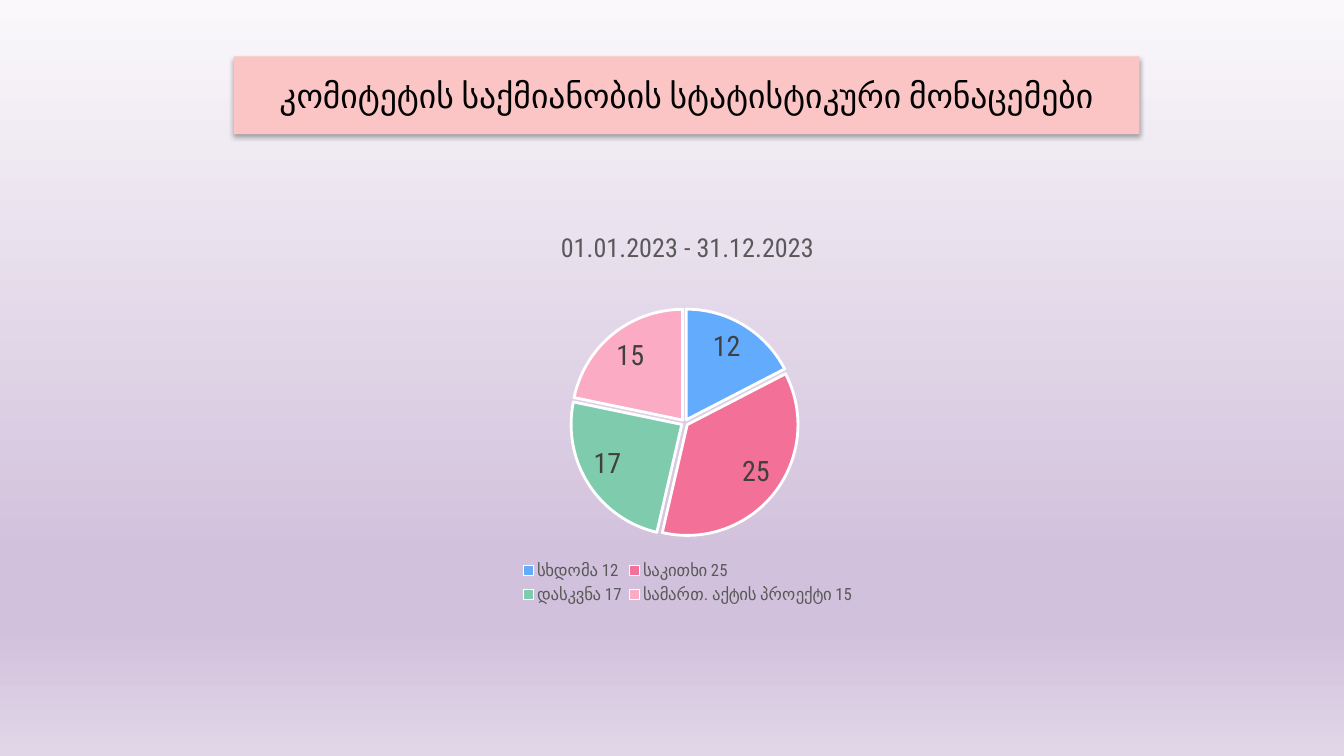
from dataclasses import dataclass

from lxml import etree
from pptx import Presentation
from pptx.chart.data import CategoryChartData
from pptx.dml.color import RGBColor
from pptx.enum.chart import XL_CHART_TYPE as ChartType
from pptx.enum.chart import XL_LABEL_POSITION as LabelPos
from pptx.enum.chart import XL_LEGEND_POSITION as LegendPos
from pptx.enum.text import MSO_ANCHOR as Anchor
from pptx.enum.text import MSO_AUTO_SIZE as AutoSize
from pptx.enum.text import PP_ALIGN as Align
from pptx.oxml import parse_xml
from pptx.oxml.ns import nsdecls, qn
from pptx.util import Inches, Pt

WIDTH, HEIGHT = Inches(13.33), Inches(7.5)


@dataclass(frozen=True)
class Theme:
    font: str = "Roboto Condensed"
    text: str = "000000"
    muted: str = "595959"
    label: str = "404040"
    edge: str = "FFFFFF"
    banner: str = "FBC5C5"
    slices: tuple = ("63ACFD", "F37199", "7FCBAE", "FBABC4")
    backdrop: tuple = ((0, "FAF8FB"), (74, "D2C1DC"), (83, "D2C1DC"), (100, "E1D6E8"))
    heading_size: float = 24
    period_size: float = 18.6
    label_size: float = 20
    legend_size: float = 12
    base_size: float = 10


THEME = Theme()


def box(left, top, width, height):
    return (int(WIDTH * left / 100), int(HEIGHT * top / 100),
            int(WIDTH * width / 100), int(HEIGHT * height / 100))


def style(font, size, color):
    font.name = THEME.font
    font.size = Pt(size)
    font.bold = False
    font.color.rgb = RGBColor.from_string(color)


def paint_background(s):
    fill = s.background.fill
    fill.gradient()
    fill.gradient_angle = 270
    stops = next(s.element.iter(qn("a:gsLst")))
    for stop in list(stops):
        stops.remove(stop)
    for percent, color in THEME.backdrop:
        stop = etree.SubElement(stops, qn("a:gs"), pos=str(percent * 1000))
        etree.SubElement(stop, qn("a:srgbClr"), val=color)


def add_banner(s, text, area):
    sp = s.shapes.title
    sp.left, sp.top, sp.width, sp.height = area
    props = sp.element.spPr
    props.find(qn("a:xfrm")).addnext(parse_xml(
        f'<a:prstGeom {nsdecls("a")} prst="roundRect"><a:avLst/></a:prstGeom>'))
    sp.fill.solid()
    sp.fill.fore_color.rgb = RGBColor.from_string(THEME.banner)
    props.append(parse_xml(
        f'<a:effectLst {nsdecls("a")}>'
        f'<a:outerShdw blurRad="{Pt(3.5)}" dist="{Pt(2.2)}" dir="5400000" rotWithShape="0">'
        '<a:srgbClr val="000000"><a:alpha val="32000"/></a:srgbClr>'
        '</a:outerShdw></a:effectLst>'))
    tf = sp.text_frame
    tf.text = text
    tf.word_wrap = True
    tf.auto_size = AutoSize.NONE
    tf.vertical_anchor = Anchor.MIDDLE
    p = tf.paragraphs[0]
    p.alignment = Align.CENTER
    style(p.runs[0].font, THEME.heading_size, THEME.text)


def manual_layout(x, y, w, h, target=""):
    return parse_xml(
        f'<c:layout {nsdecls("c")}><c:manualLayout>{target}'
        '<c:xMode val="edge"/><c:yMode val="edge"/>'
        f'<c:x val="{x}"/><c:y val="{y}"/><c:w val="{w}"/><c:h val="{h}"/>'
        '</c:manualLayout></c:layout>')


def place_chart_parts(chart):
    plot_area = next(chart.element.iter(qn("c:plotArea")))
    for layout in plot_area.findall(qn("c:layout")):
        plot_area.remove(layout)
    plot_area.insert(0, manual_layout(
        0.3, 0.24, 0.39, 0.57, '<c:layoutTarget val="inner"/>'))
    legend = next(chart.element.iter(qn("c:legend")))
    for layout in legend.findall(qn("c:layout")):
        legend.remove(layout)
    legend.find(qn("c:legendPos")).addnext(manual_layout(0.21, 0.86, 0.58, 0.13))


def color_slices(series):
    explosion = parse_xml(f'<c:explosion {nsdecls("c")} val="3"/>')
    next(series._element.iter(qn("c:tx"))).addnext(explosion)
    for i, color in enumerate(THEME.slices):
        look = series.points[i].format
        look.fill.solid()
        look.fill.fore_color.rgb = RGBColor.from_string(color)
        look.line.color.rgb = RGBColor.from_string(THEME.edge)
        look.line.width = Pt(2)


def add_pie(s, period, counts, area):
    data = CategoryChartData()
    data.categories = [f"{name} {count}" for name, count in counts.items()]
    data.add_series("Series 1", counts.values())
    chart = s.shapes.add_chart(ChartType.PIE, *area, data).chart
    style(chart.font, THEME.base_size, THEME.text)

    chart.has_title = True
    tf = chart.chart_title.text_frame
    tf.text = period
    style(tf.paragraphs[0].runs[0].font, THEME.period_size, THEME.muted)
    chart.chart_title.include_in_layout = False

    chart.has_legend = True
    chart.legend.position = LegendPos.BOTTOM
    chart.legend.include_in_layout = False
    style(chart.legend.font, THEME.legend_size, THEME.muted)

    plot = chart.plots[0]
    plot.vary_by_categories = True
    color_slices(plot.series[0])
    labels = plot.series[0].data_labels
    labels.show_value = True
    labels.show_percentage = False
    labels.position = LabelPos.INSIDE_END
    style(labels.font, THEME.label_size, THEME.label)
    place_chart_parts(chart)


def main():
    prs = Presentation()
    prs.slide_width, prs.slide_height = WIDTH, HEIGHT
    s = prs.slides.add_slide(prs.slide_layouts[5])
    paint_background(s)
    add_banner(s, "კომიტეტის საქმიანობის სტატისტიკური მონაცემები",
               box(17.4, 7.47, 67.37, 10.27))
    counts = {"სხდომა": 12, "საკითხი": 25, "დასკვნა": 17, "სამართ. აქტის პროექტი": 15}
    add_pie(s, "01.01.2023 - 31.12.2023", counts, box(29.11, 28.13, 44.11, 52.93))
    prs.save("out.pptx")


if __name__ == "__main__":
    main()
